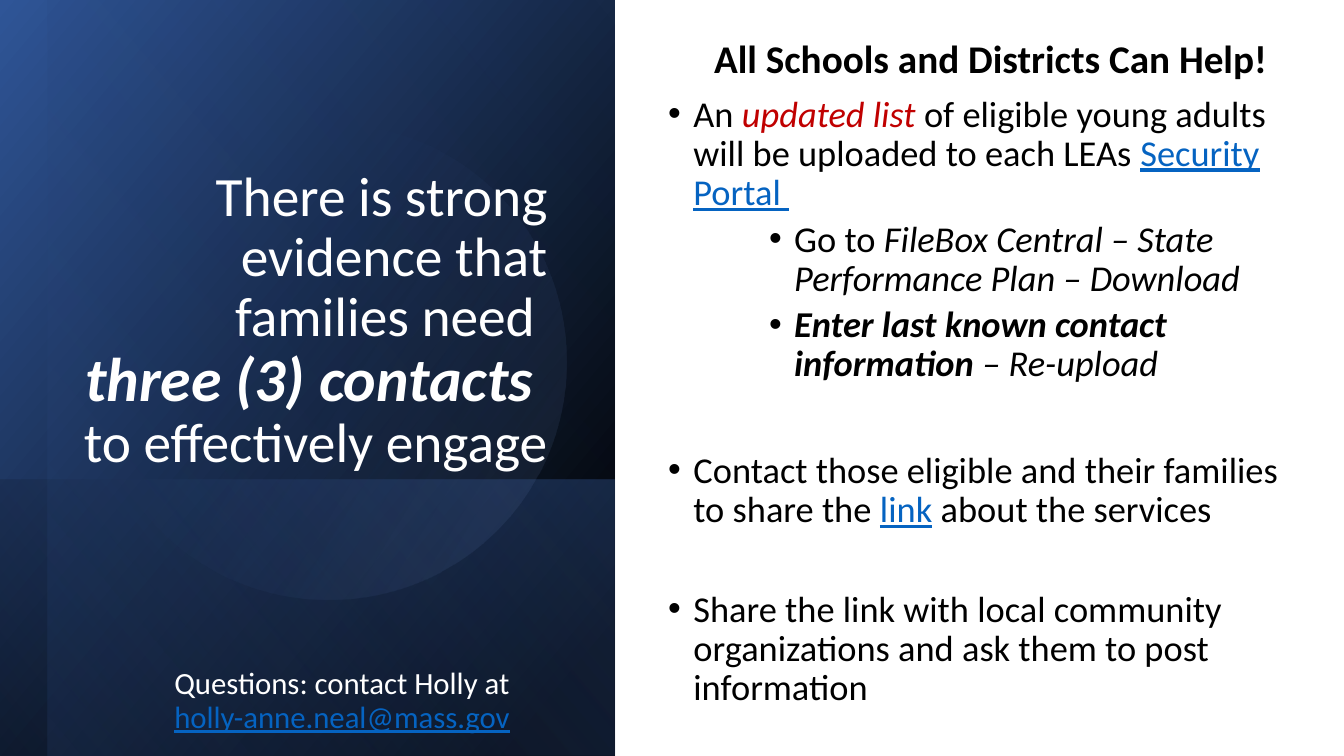
import lxml.etree
import pptx
import pptx.dml.color
import pptx.enum.shapes
import pptx.enum.text
import pptx.oxml.ns
import pptx.util

Pt = pptx.util.Pt
RGBColor = pptx.dml.color.RGBColor
Shape = pptx.enum.shapes.MSO_SHAPE
Align = pptx.enum.text.PP_ALIGN
Anchor = pptx.enum.text.MSO_ANCHOR
qn = pptx.oxml.ns.qn

BLACK = RGBColor(0x00, 0x00, 0x00)
WHITE = RGBColor(0xFF, 0xFF, 0xFF)
NAVY = RGBColor(0x2F, 0x55, 0x97)
BLUE = RGBColor(0x44, 0x72, 0xC4)
PALE_BLUE = RGBColor(0x8F, 0xAA, 0xDC)
RED = RGBColor(0xC0, 0x00, 0x00)
LINK_BLUE = RGBColor(0x05, 0x63, 0xC1)

ITALIC = {"italic": True}
BOLD_ITALIC = {"bold": True, "italic": True}
LINK = {"color": LINK_BLUE, "underline": True}


def apply_format(target, values):
    for name, value in values.items():
        if name == "color":
            target.color.rgb = value
        else:
            setattr(target, name, value)


def add_gradient(page, kind, bounds, rotation, angle, stops, flipped=True):
    shape = page.shapes.add_shape(kind, *map(Pt, bounds))
    shape.shadow.inherit = False
    shape.rotation = rotation
    if flipped:
        shape._element.spPr.find(qn("a:xfrm")).set("flipH", "1")
    shape.line.fill.background()
    shape.fill.gradient()
    shape.fill.gradient_angle = 360 - angle
    for stop, (position, color, opacity) in zip(shape.fill.gradient_stops, stops):
        stop.position = position
        stop.color.rgb = color
    colors = shape._element.spPr.iter(qn("a:srgbClr"))
    for element, (position, color, opacity) in zip(list(colors), stops):
        if opacity < 100:
            alpha = lxml.etree.SubElement(element, qn("a:alpha"))
            alpha.set("val", str(opacity * 1000))


def add_text_box(page, bounds, anchor):
    box = page.shapes.add_textbox(*map(Pt, bounds))
    frame = box.text_frame
    frame.word_wrap = True
    frame.vertical_anchor = anchor
    return frame


def add_bullet(para, margin):
    properties = para._p.get_or_add_pPr()
    properties.set("marL", str(Pt(margin)))
    properties.set("indent", str(Pt(-18)))
    font = lxml.etree.SubElement(properties, qn("a:buFont"))
    font.set("typeface", "Arial")
    lxml.etree.SubElement(properties, qn("a:buChar")).set("char", "•")


def fill_paragraph(para, spans, size, color, before=0, align=Align.LEFT, margin=None):
    layout = {"alignment": align, "line_spacing": 0.9, "space_before": Pt(before)}
    apply_format(para, layout)
    if margin is not None:
        add_bullet(para, margin)
    base = {"name": "Calibri", "size": Pt(size), "color": color}
    for text, values in spans:
        if text == "\n":
            para.add_line_break()
            continue
        span = para.add_run()
        span.text = text
        apply_format(span.font, {**base, **values})


def add_left_panel(page):
    add_gradient(page, Shape.RECTANGLE, (-50.4, 50.4, 540, 439.2), 90, 50,
                 [(0.08, BLACK, 100), (1, NAVY, 100)])
    add_gradient(page, Shape.RECTANGLE, (120.96, 221.76, 197.28, 439.2), 90, 130,
                 [(0.02, BLUE, 29), (1, BLACK, 30)])
    add_gradient(page, Shape.RECTANGLE, (-33.2, 67.3, 540, 405.4), 90, 130,
                 [(0, BLACK, 0), (0.99, BLUE, 11)])
    add_gradient(page, Shape.OVAL, (64.8, 88.6, 339.8, 339.8), 101.6, 290,
                 [(0.39, BLUE, 0), (1, PALE_BLUE, 15)], flipped=False)


def add_headline(page):
    frame = add_text_box(page, (46.8, 76.3, 351.4, 266.4), Anchor.BOTTOM)
    spans = [
        ("There is strong evidence that families need ", {}),
        ("\n", {}),
        ("three (3) contacts ", {**BOLD_ITALIC, "size": Pt(44.1)}),
        ("\n", {}),
        ("to effectively engage", {}),
    ]
    fill_paragraph(frame.paragraphs[0], spans, 39.6, WHITE, align=Align.RIGHT)


def add_actions(page):
    frame = add_text_box(page, (470.2, 10.1, 474.5, 514.1), Anchor.MIDDLE)
    heading = [("All Schools and Districts Can Help!", {"bold": True})]
    fill_paragraph(frame.paragraphs[0], heading, 28, BLACK, align=Align.CENTER)
    actions = [
        (18, 10, [("An ", {}), ("updated list ", {**ITALIC, "color": RED}),
                  ("of eligible young adults will be uploaded to each LEAs ", {}),
                  ("Security Portal ", LINK)]),
        (90, 5, [("Go to ", {}),
                 ("FileBox Central – State Performance Plan – Download", ITALIC)]),
        (90, 5, [("Enter last known contact information ", BOLD_ITALIC),
                 ("– Re-upload", ITALIC)]),
        (18, 48, [("Contact those eligible and their families to share the ", {}),
                  ("link", LINK), (" about the services", {})]),
        (18, 43, [("Share the link with local community organizations "
                   "and ask them to post information", {})]),
    ]
    for margin, before, spans in actions:
        fill_paragraph(frame.add_paragraph(), spans, 26, BLACK, before, margin=margin)


def add_contact(page):
    frame = add_text_box(page, (117.4, 377.3, 280, 151.2), Anchor.BOTTOM)
    spans = [("Questions: contact Holly at ", {}), ("holly-anne.neal@mass.gov", LINK)]
    fill_paragraph(frame.paragraphs[0], spans, 22, WHITE)


def main():
    deck = pptx.Presentation()
    apply_format(deck, {"slide_width": Pt(960), "slide_height": Pt(540)})
    page = deck.slides.add_slide(deck.slide_layouts[6])
    add_left_panel(page)
    add_headline(page)
    add_actions(page)
    add_contact(page)
    deck.save("out.pptx")


if __name__ == "__main__":
    main()
